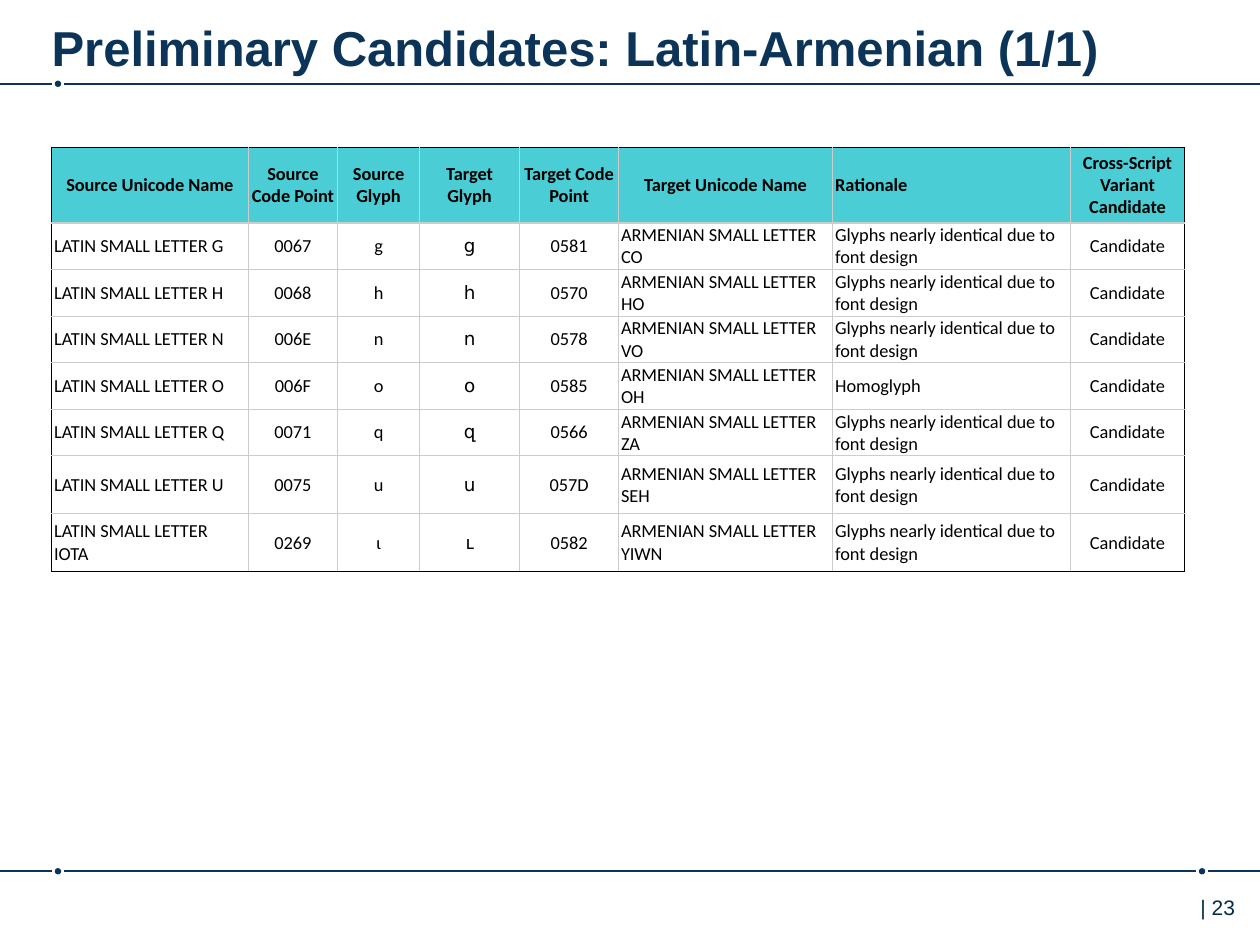
from dataclasses import dataclass

from lxml.etree import SubElement
from pptx import Presentation
from pptx.dml.color import RGBColor
from pptx.enum.shapes import MSO_CONNECTOR, MSO_SHAPE
from pptx.enum.text import MSO_ANCHOR, MSO_AUTO_SIZE, PP_ALIGN
from pptx.oxml.ns import qn
from pptx.util import Emu, Inches, Pt

NAVY = RGBColor(0x0B, 0x34, 0x58)
PAGE_BLUE = RGBColor(0x00, 0x2B, 0x49)
TURQUOISE = RGBColor(0x4B, 0xCD, 0xD5)
BLACK = RGBColor(0, 0, 0)
GRAY = RGBColor(0xCC, 0xCC, 0xCC)

GRID = Inches(0.1)
GRID_COLUMNS, GRID_ROWS = 100, 75
LEFT_MARGIN = 4.1
DOT_SIZE = 0.5
DOT_GAP = 0.5
NEAR_IDENTICAL = "Glyphs nearly identical due to font design"


@dataclass(frozen=True)
class Column:
    heading: str
    width: float
    align: PP_ALIGN = PP_ALIGN.CENTER
    heading_align: PP_ALIGN = PP_ALIGN.CENTER


@dataclass(frozen=True)
class Candidate:
    latin_name: str
    latin_code: str
    latin_glyph: str
    armenian_glyph: str
    armenian_code: str
    armenian_name: str
    row_height: float = 3.2
    rationale: str = NEAR_IDENTICAL

    def texts(self) -> list[str]:
        return [
            f"LATIN SMALL LETTER {self.latin_name}", self.latin_code, self.latin_glyph,
            self.armenian_glyph, self.armenian_code,
            f"ARMENIAN SMALL LETTER {self.armenian_name}", self.rationale, "Candidate",
        ]


@dataclass(frozen=True)
class Rule:
    row: float
    dots: tuple[float, ...]


COLUMNS = [
    Column("Source Unicode Name", 15.6, PP_ALIGN.LEFT),
    Column("Source Code Point", 7.1),
    Column("Source Glyph", 6.5),
    Column("Target Glyph", 7.95),
    Column("Target Code Point", 7.85),
    Column("Target Unicode Name", 17, PP_ALIGN.LEFT),
    Column("Rationale", 18.85, PP_ALIGN.LEFT, PP_ALIGN.LEFT),
    Column("Cross-Script Variant Candidate", 9.1),
]
CANDIDATES = [
    Candidate("G", "0067", "g", "ց", "0581", "CO"),
    Candidate("H", "0068", "h", "հ", "0570", "HO"),
    Candidate("N", "006E", "n", "ո", "0578", "VO"),
    Candidate("O", "006F", "o", "օ", "0585", "OH", rationale="Homoglyph"),
    Candidate("Q", "0071", "q", "զ", "0566", "ZA"),
    Candidate("U", "0075", "u", "ս", "057D", "SEH", 4.6),
    Candidate("IOTA", "0269", "ɩ", "ւ", "0582", "YIWN", 4.6),
]
HEADING_HEIGHT = 6
RULES = [Rule(6.65, (4.6,)), Rule(69.15, (4.6, 95.4))]


def units(count: float) -> Emu:
    return Emu(round(GRID * count))


def box(left: float, top: float, width: float, height: float) -> list[Emu]:
    return [units(count) for count in (left, top, width, height)]


def add_run(paragraph, text: str, font_name: str, size: float, color: RGBColor,
            bold: bool = False) -> None:
    run = paragraph.add_run()
    run.text = text
    run.font.name = font_name
    run.font.size = Pt(size)
    run.font.bold = bold
    run.font.color.rgb = color


def draw_rule(slide, rule: Rule) -> None:
    ends = [0]
    for center in rule.dots:
        dot = slide.shapes.add_shape(
            MSO_SHAPE.OVAL,
            *box(center - DOT_SIZE / 2, rule.row - DOT_SIZE / 2, DOT_SIZE, DOT_SIZE))
        dot.shadow.inherit = False
        dot.fill.solid()
        dot.fill.fore_color.rgb = NAVY
        dot.line.fill.background()
        ends += [center - DOT_GAP, center + DOT_GAP]
    ends.append(GRID_COLUMNS)
    for start, end in zip(ends[::2], ends[1::2]):
        segment = slide.shapes.add_connector(
            MSO_CONNECTOR.STRAIGHT, units(start), units(rule.row), units(end), units(rule.row))
        segment.line.color.rgb = NAVY
        segment.line.width = Pt(1)
        SubElement(segment.element.spPr, qn("a:effectLst"))


def set_borders(cell, colors: dict[str, RGBColor]) -> None:
    properties = cell._tc.get_or_add_tcPr()
    for side, color in colors.items():
        border = SubElement(properties, qn(f"a:ln{side}"), w=str(Pt(0.75)))
        SubElement(SubElement(border, qn("a:solidFill")), qn("a:srgbClr"), val=str(color))


def draw_table(slide) -> None:
    texts = [[column.heading for column in COLUMNS]]
    texts += [candidate.texts() for candidate in CANDIDATES]
    heights = [HEADING_HEIGHT] + [candidate.row_height for candidate in CANDIDATES]
    table = slide.shapes.add_table(
        len(texts), len(COLUMNS),
        *box(LEFT_MARGIN, 11.7, sum(column.width for column in COLUMNS), sum(heights))).table
    table.first_row = table.horz_banding = False
    for column, table_column in zip(COLUMNS, table.columns):
        table_column.width = units(column.width)
    last_row, last_column = len(texts) - 1, len(COLUMNS) - 1
    for row, (row_texts, height) in enumerate(zip(texts, heights)):
        table.rows[row].height = units(height)
        heading = row == 0
        for index, (column, text) in enumerate(zip(COLUMNS, row_texts)):
            cell = table.cell(row, index)
            set_borders(cell, {
                "L": BLACK if index == 0 else GRAY,
                "R": BLACK if index == last_column else GRAY,
                "T": BLACK if heading else GRAY,
                "B": BLACK if row == last_row else GRAY,
            })
            if heading:
                cell.fill.solid()
                cell.fill.fore_color.rgb = TURQUOISE
            else:
                cell.fill.background()
            cell.margin_left = cell.margin_right = units(0.2)
            cell.margin_top = cell.margin_bottom = units(0.1)
            cell.vertical_anchor = MSO_ANCHOR.MIDDLE
            paragraph = cell.text_frame.paragraphs[0]
            paragraph.alignment = column.heading_align if heading else column.align
            add_run(paragraph, text, "Calibri", 10.5, BLACK, heading)


def draw_title(slide) -> None:
    title = slide.shapes.title
    title.left, title.top, title.width, title.height = box(LEFT_MARGIN, 0.5, 87.6, 4.9)
    frame = title.text_frame
    frame.auto_size = MSO_AUTO_SIZE.NONE
    frame.word_wrap = True
    frame.vertical_anchor = MSO_ANCHOR.TOP
    frame.margin_left = frame.margin_right = 0
    frame.margin_top, frame.margin_bottom = units(0.9), 0
    paragraph = frame.paragraphs[0]
    paragraph.alignment = PP_ALIGN.LEFT
    add_run(paragraph, "Preliminary Candidates: Latin-Armenian (1/1)", "Arial", 28, NAVY, True)


def draw_page_number(slide) -> None:
    page_number = slide.shapes.add_textbox(*box(92.9, 70.5, 6.1, 4))
    frame = page_number.text_frame
    frame.word_wrap = True
    paragraph = frame.paragraphs[0]
    paragraph.alignment = PP_ALIGN.RIGHT
    add_run(paragraph, "| 23", "Arial", 12, PAGE_BLUE)


def main() -> None:
    presentation = Presentation()
    presentation.slide_width = units(GRID_COLUMNS)
    presentation.slide_height = units(GRID_ROWS)
    slide = presentation.slides.add_slide(presentation.slide_layouts.get_by_name("Title Only"))
    for rule in RULES:
        draw_rule(slide, rule)
    draw_page_number(slide)
    draw_title(slide)
    draw_table(slide)
    presentation.save("out.pptx")


if __name__ == "__main__":
    main()
